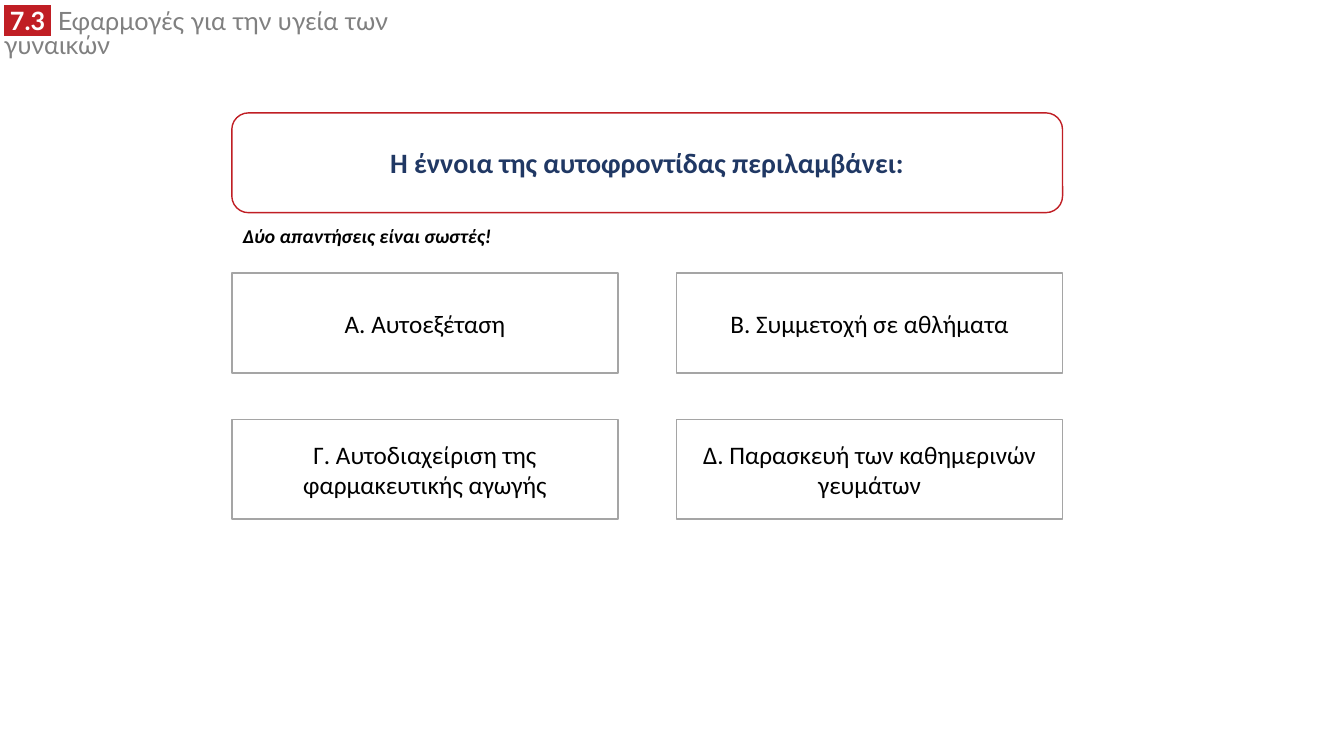
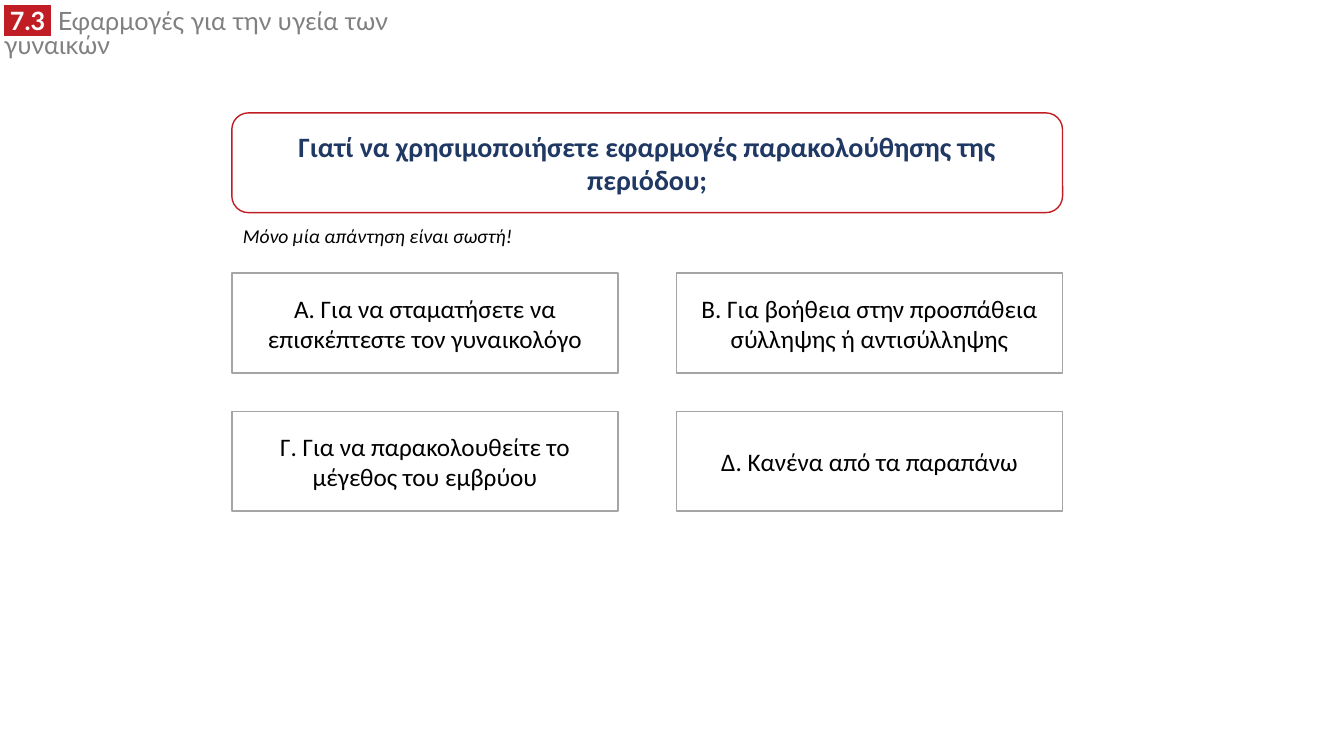
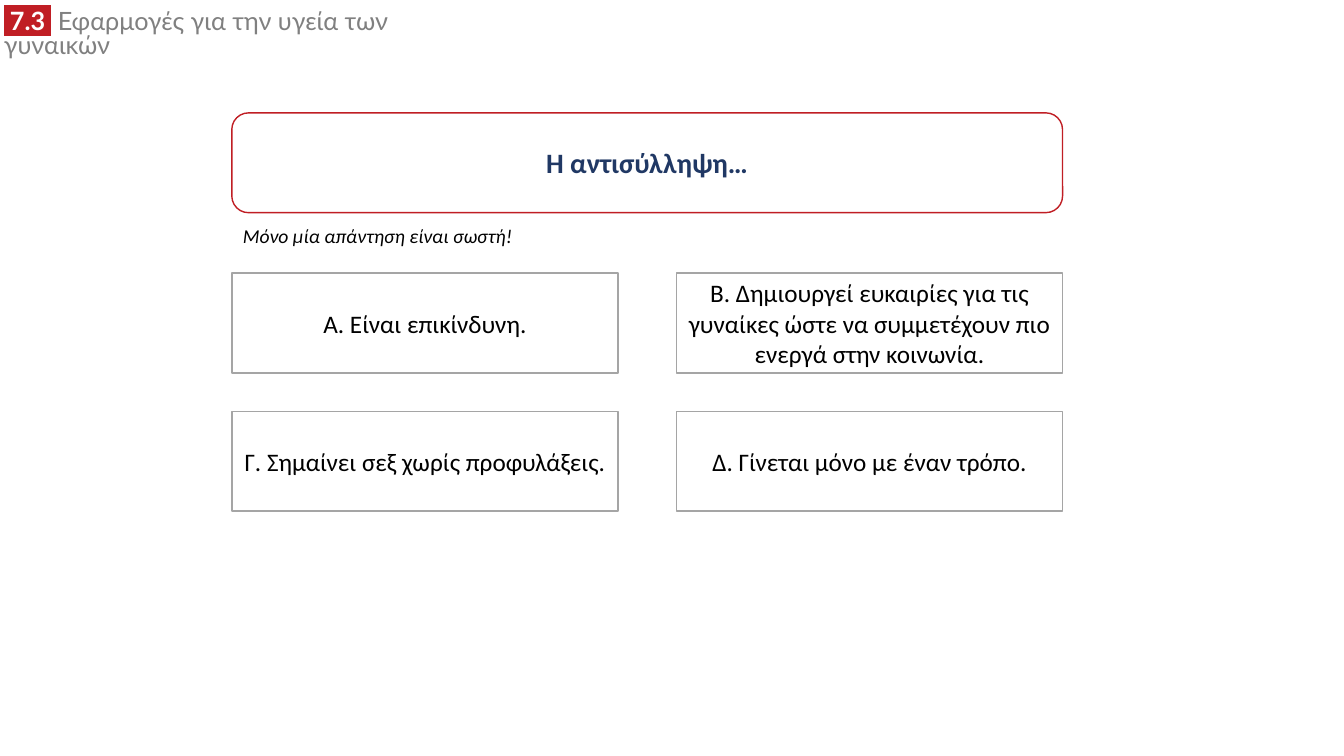
from lxml import etree
from pptx import Presentation
from pptx.dml.color import RGBColor
from pptx.enum.shapes import MSO_SHAPE as Shape
from pptx.enum.text import MSO_ANCHOR as Anchor, MSO_AUTO_SIZE as AutoSize, PP_ALIGN as Align
from pptx.oxml.ns import qn
from pptx.util import Inches, Pt

COLORS = {
    "red": "C01E24",
    "navy": "203864",
    "gray": "808080",
    "border": "A5A5A5",
    "black": "000000",
    "white": "FFFFFF",
}

# Layout, in percent of the slide's width or height
LEFT, COLUMN_WIDTH, COLUMN_GAP = 17.25, 28.73, 4.35
QUESTION_TOP, NOTE_TOP, ANSWERS_TOP = 14.93, 28.93, 36.13
CARD_HEIGHT, NOTE_HEIGHT = 13.2, 4.53

QUIZZES = [
    {
        "question": "Η έννοια της αυτοφροντίδας περιλαμβάνει:",
        "note": "Δύο απαντήσεις είναι σωστές!",
        "note_width": 20.1,
        "note_bold": True,
        "row_pitch": 19.33,
        "answers": [
            "Α. Αυτοεξέταση",
            "Β. Συμμετοχή σε αθλήματα",
            "Γ. Αυτοδιαχείριση της φαρμακευτικής αγωγής",
            "Δ. Παρασκευή των καθημερινών γευμάτων",
        ],
    },
    {
        "question": "Γιατί να χρησιμοποιήσετε εφαρμογές παρακολούθησης της περιόδου;",
        "answers": [
            "Α. Για να σταματήσετε να επισκέπτεστε τον γυναικολόγο",
            "Β. Για βοήθεια στην προσπάθεια σύλληψης ή αντισύλληψης",
            "Γ. Για να παρακολουθείτε το μέγεθος του εμβρύου",
            "Δ. Κανένα από τα παραπάνω",
        ],
    },
    {
        "question": "Η αντισύλληψη…",
        "answers": [
            "Α. Είναι επικίνδυνη.",
            "Β. Δημιουργεί ευκαιρίες για τις γυναίκες ώστε να συμμετέχουν πιο "
            "ενεργά στην κοινωνία.",
            "Γ. Σημαίνει σεξ χωρίς προφυλάξεις.",
            "Δ. Γίνεται μόνο με έναν τρόπο.",
        ],
    },
]


def rgb(name):
    return RGBColor.from_string(COLORS[name])


class QuizDeck:
    def __init__(self):
        self.deck = Presentation()
        self.deck.slide_width, self.deck.slide_height = Inches(13.33), Inches(7.5)
        self.slide = None

    def place(self, left, top, width, height):
        """Turn percentages of the slide's size into lengths."""
        across, down = self.deck.slide_width / 100, self.deck.slide_height / 100
        return [round(n) for n in (left * across, top * down, width * across, height * down)]

    def style(self, para, size, font="Calibri", color="black", bold=False, italic=False):
        para.font.size, para.font.name = Pt(size), font
        para.font.bold, para.font.italic = bold, italic
        para.font.color.rgb = rgb(color)

    def text_box(self, *area, wrap):
        box = self.slide.shapes.add_textbox(*self.place(*area))
        box.text_frame.word_wrap = wrap
        box.text_frame.auto_size = AutoSize.SHAPE_TO_FIT_TEXT
        return box.text_frame.paragraphs[0]

    def new_page(self):
        self.slide = self.deck.slides.add_slide(self.deck.slide_layouts[6])
        self.header("7.3", "Εφαρμογές για την υγεία των γυναικών")

    def header(self, number, title):
        para = self.text_box(-0.45, 0.8, 37.58, 4.67, wrap=True)
        para.line_spacing = 0.8
        self.style(para, 18, font="Lato", color="gray")
        badge = para.add_run()
        badge.text = f" {number} "
        badge.font.bold = True
        badge.font.color.rgb = rgb("white")
        fill = badge.font._element.find(qn("a:solidFill"))
        highlight = etree.Element(qn("a:highlight"))
        etree.SubElement(highlight, qn("a:srgbClr"), val=COLORS["red"])
        fill.addnext(highlight)
        para.add_run().text = f" {title}"

    def card(self, shape, area, text, border, **font):
        box = self.slide.shapes.add_shape(shape, *self.place(*area))
        box.shadow.inherit = False
        box.fill.solid()
        box.fill.fore_color.rgb = rgb("white")
        box.line.color.rgb = rgb(border)
        box.line.width = Pt(1)
        box.text_frame.word_wrap = True
        box.text_frame.vertical_anchor = Anchor.MIDDLE
        para = box.text_frame.paragraphs[0]
        para.alignment = Align.CENTER
        self.style(para, **font)
        para.add_run().text = text

    def question(self, text):
        area = LEFT, QUESTION_TOP, 2 * COLUMN_WIDTH + COLUMN_GAP, CARD_HEIGHT
        self.card(Shape.ROUNDED_RECTANGLE, area, text, "red", size=20, color="navy", bold=True)

    def note(self, text, width, bold):
        para = self.text_box(LEFT + 0.08, NOTE_TOP, width, NOTE_HEIGHT, wrap=False)
        self.style(para, 14, bold=bold, italic=True)
        para.add_run().text = text

    def answers(self, texts, row_pitch):
        for index, text in enumerate(texts):
            row, column = divmod(index, 2)
            area = (LEFT + column * (COLUMN_WIDTH + COLUMN_GAP),
                    ANSWERS_TOP + row * row_pitch, COLUMN_WIDTH, CARD_HEIGHT)
            self.card(Shape.RECTANGLE, area, text, "border", size=18)


def main():
    quiz_deck = QuizDeck()
    for quiz in QUIZZES:
        quiz_deck.new_page()
        quiz_deck.question(quiz["question"])
        quiz_deck.note(quiz.get("note", "Μόνο μία απάντηση είναι σωστή!"),
                       quiz.get("note_width", 21.68), quiz.get("note_bold", False))
        quiz_deck.answers(quiz["answers"], quiz.get("row_pitch", 18.27))
    quiz_deck.deck.save("out.pptx")


if __name__ == "__main__":
    main()
